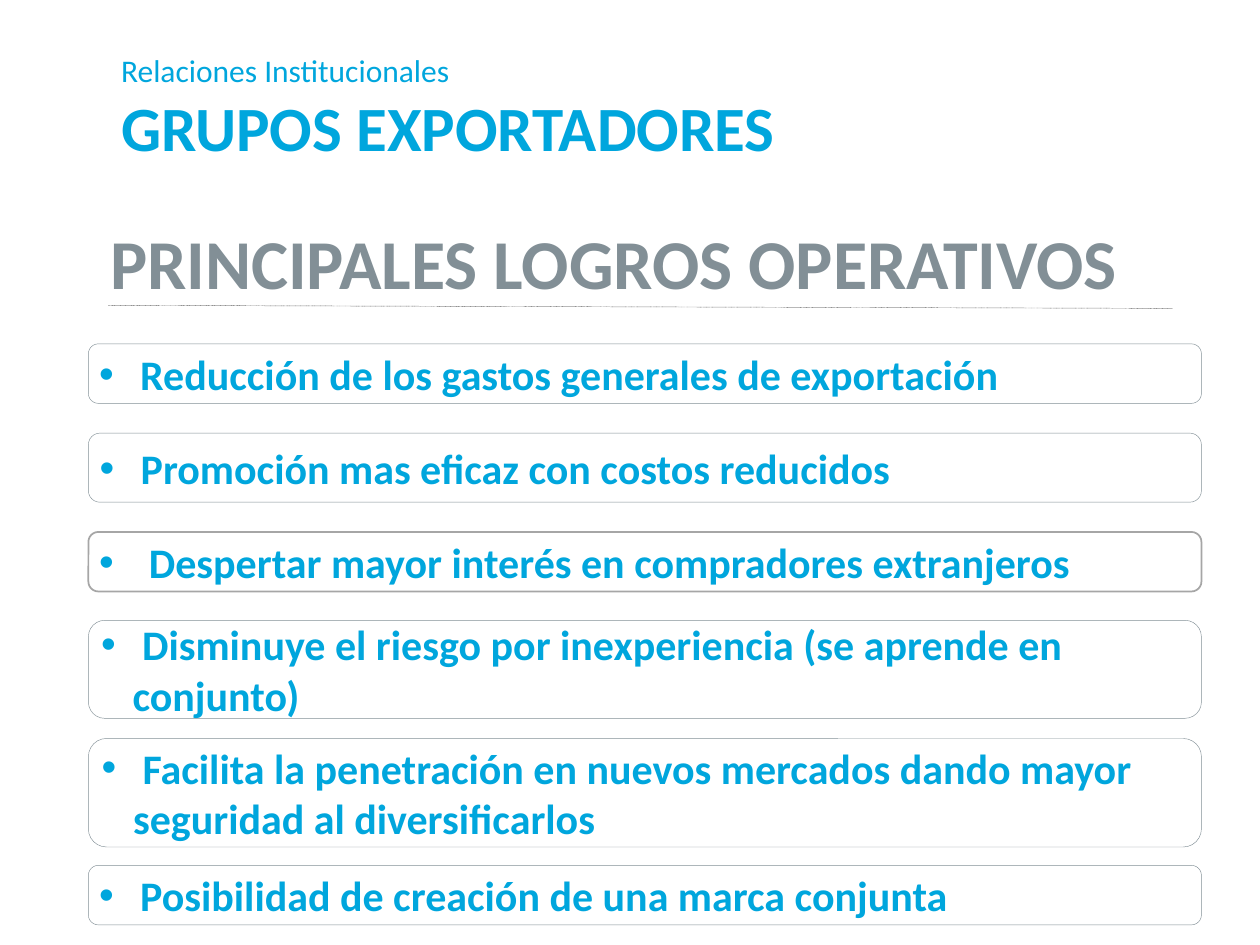
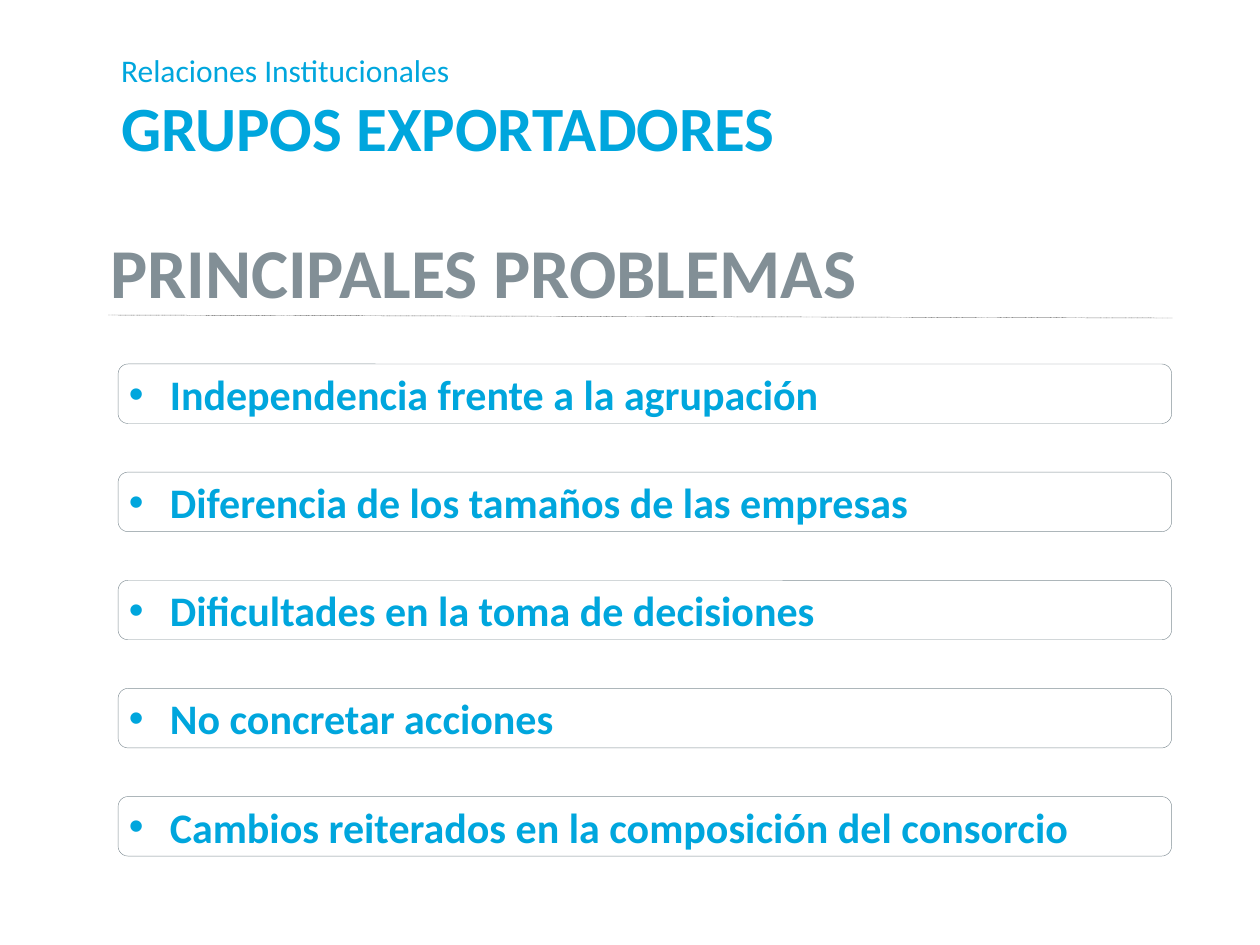
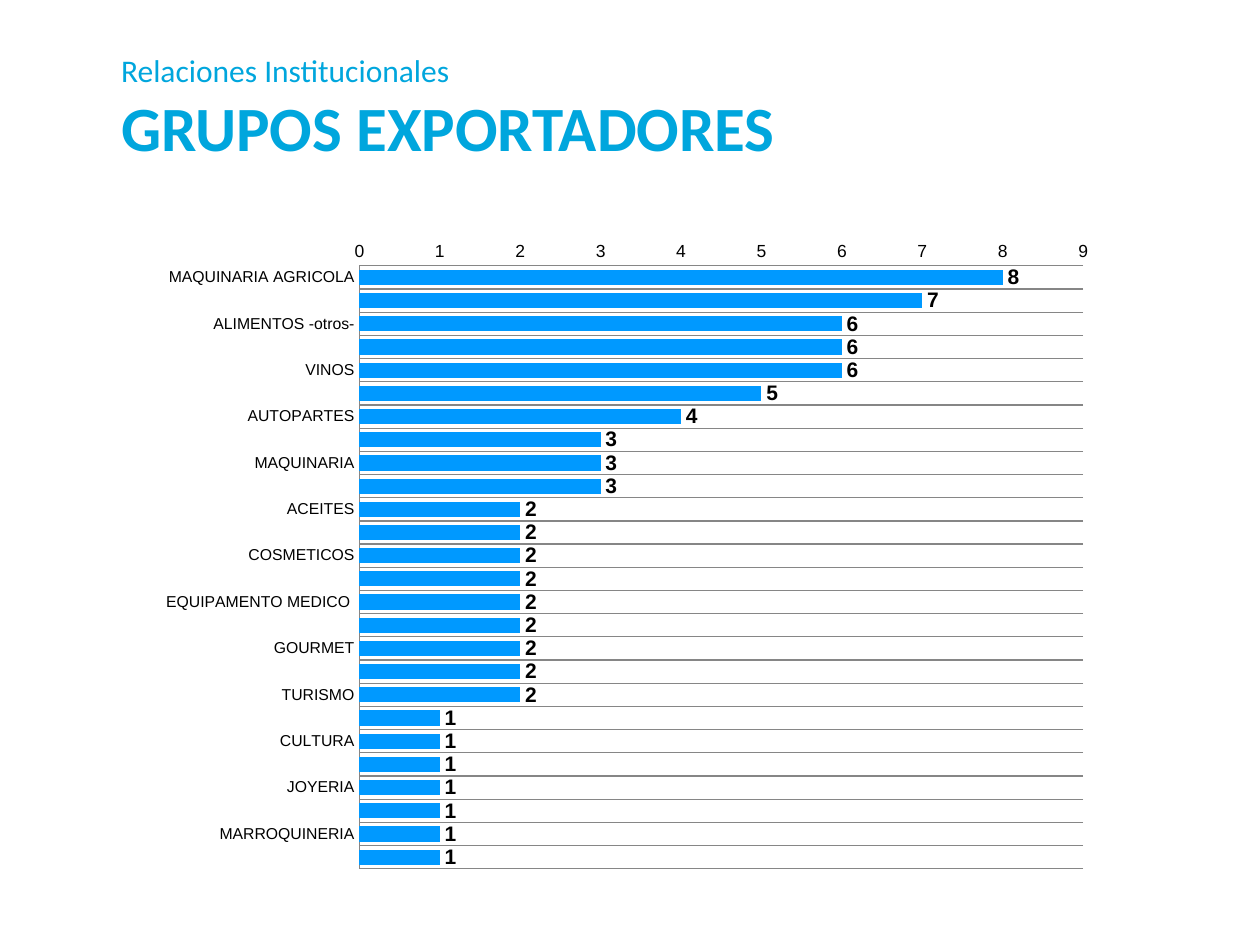
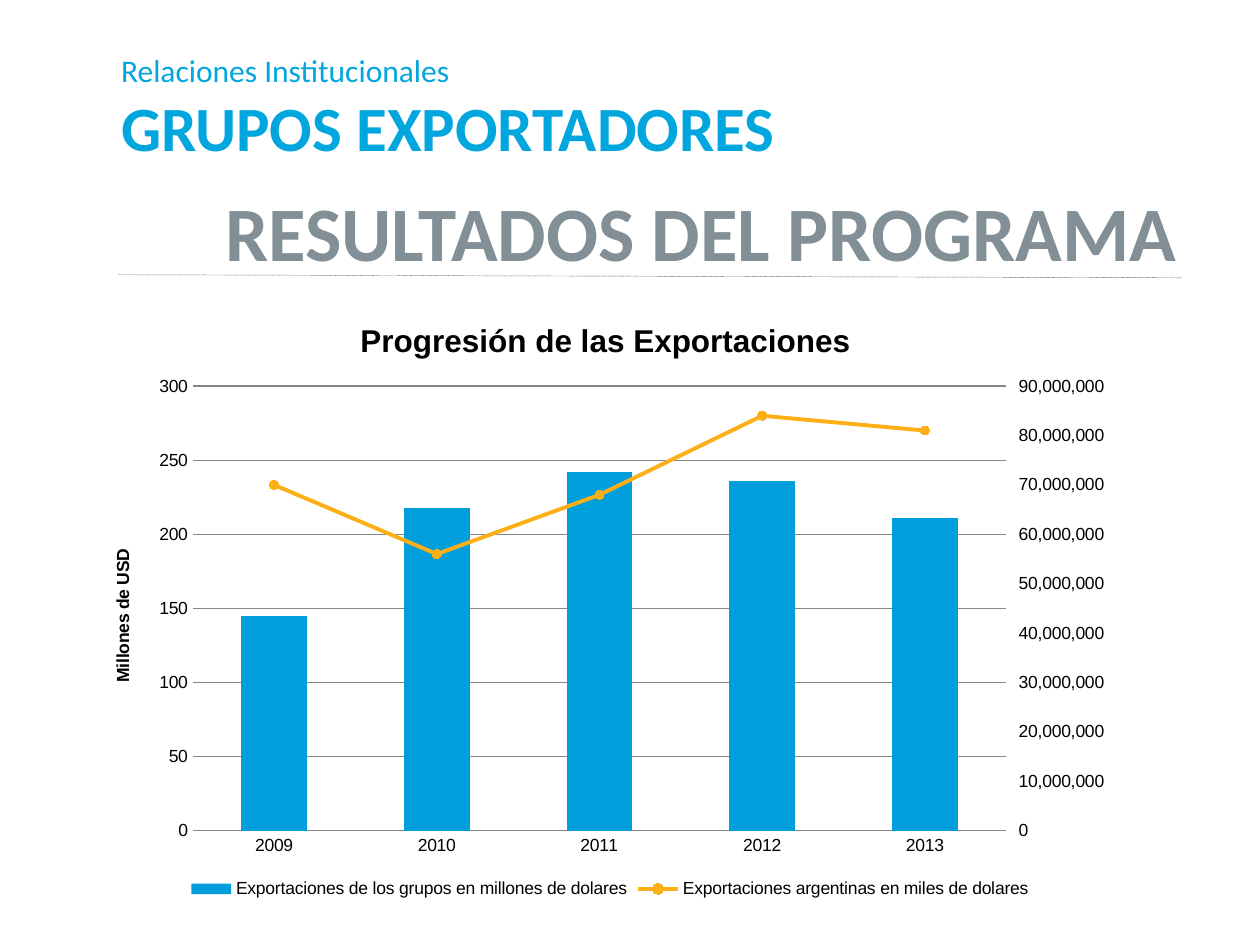
"""Build four slides on export groups: gains, problems, sectors and results."""
from dataclasses import dataclass

from pptx import Presentation
from pptx.chart.data import CategoryChartData as Data
from pptx.dml.color import RGBColor as RGB
from pptx.enum.chart import XL_CHART_TYPE as Kind, XL_LABEL_POSITION as Spot
from pptx.enum.chart import XL_LEGEND_POSITION as Side, XL_MARKER_STYLE as Mark
from pptx.enum.chart import XL_TICK_MARK as Tick
from pptx.enum.dml import MSO_LINE as Dash
from pptx.enum.shapes import MSO_CONNECTOR as Link, MSO_SHAPE as Form
from pptx.enum.text import MSO_ANCHOR as Anchor, MSO_AUTO_SIZE as Fit, PP_ALIGN as Align
from pptx.oxml import parse_xml
from pptx.oxml.ns import nsdecls, qn
from pptx.util import Pt


@dataclass(frozen=True)
class Theme:
    """Colours, fonts and type sizes."""
    blue: RGB = RGB.from_string("00A6DD")
    gray: RGB = RGB.from_string("828F96")
    pale: RGB = RGB.from_string("A6A6A6")
    dark: RGB = RGB.from_string("595959")
    grid: RGB = RGB.from_string("868686")
    black: RGB = RGB.from_string("000000")
    white: RGB = RGB.from_string("FFFFFF")
    bar: RGB = RGB.from_string("0099FF")
    column: RGB = RGB.from_string("009EDB")
    gold: RGB = RGB.from_string("FCAF17")
    font: str = "Calibri"
    plain: str = "Arial"
    small: int = 18
    title: int = 36
    head: int = 40
    large: int = 44
    item: int = 24
    label: int = 9
    axis: int = 10
    value: int = 12


look = Theme()


def box(slide, text, area, size, color, dent=0):
    """Add a rounded box with bold text, bulleted when dent is given."""
    shape = slide.shapes.add_shape(Form.ROUNDED_RECTANGLE, *map(Pt, area))
    shape.shadow.inherit = False
    shape.fill.background()
    shape.line.fill.background()
    frame = shape.text_frame
    frame.word_wrap = True
    frame.vertical_anchor = Anchor.MIDDLE
    frame.margin_left = frame.margin_right = Pt(4.5)
    frame.margin_top = frame.margin_bottom = Pt(3.6)
    frame.text = text
    par = frame.paragraphs[0]
    par.alignment = Align.LEFT
    if dent:
        shape.line.color.rgb = look.gray
        shape.line.width = Pt(0.25)
        props = par._p.get_or_add_pPr()
        props.set("marL", str(Pt(dent)))
        props.set("indent", str(-Pt(dent)))
        props.append(parse_xml(f'<a:buFont {nsdecls("a")} typeface="Arial"/>'))
        props.append(parse_xml(f'<a:buChar {nsdecls("a")} char="•"/>'))
    font = par.runs[0].font
    font.name, font.size, font.bold = look.font, Pt(size), True
    font.color.rgb = color
    return shape


def graph(slide, kind, data, area, plot):
    """Add a chart with the shared type and a fixed plot area."""
    chart = slide.shapes.add_chart(kind, *map(Pt, area), data).chart
    chart.font.name, chart.font.size = look.plain, Pt(look.axis)
    chart.font.color.rgb = look.black
    zone = chart._chartSpace.chart.plotArea
    for old in zone.findall(qn("c:layout")):
        zone.remove(old)
    parts = "".join(f'<c:{key} val="{val}"/>' for key, val in zip("xywh", plot))
    zone.insert(0, parse_xml(
        f'<c:layout {nsdecls("c")}><c:manualLayout><c:layoutTarget val="inner"/>'
        f'<c:xMode val="edge"/><c:yMode val="edge"/>{parts}'
        '</c:manualLayout></c:layout>'))
    for axis in (chart.category_axis, chart.value_axis):
        axis.major_tick_mark = axis.minor_tick_mark = Tick.NONE
        axis.has_major_gridlines = False
        axis.format.line.color.rgb = look.grid
        axis.format.line.width = Pt(0.75)
    return chart


deck = Presentation()
deck.slide_width, deck.slide_height = Pt(720), Pt(540)
for _ in range(4):
    slide = deck.slides.add_slide(deck.slide_layouts[5])
    title = slide.shapes.title
    title.left, title.top, title.width, title.height = map(Pt, (62, 16.5, 428, 90))
    frame = title.text_frame
    frame.text = "Relaciones Institucionales \vGRUPOS EXPORTADORES"
    frame.auto_size = Fit.NONE
    frame.word_wrap = True
    frame.vertical_anchor = Anchor.MIDDLE
    par = frame.paragraphs[0]
    par.alignment = Align.LEFT
    for run, size, bold in zip(par.runs, (look.small, look.title), (False, True)):
        run.font.name, run.font.size, run.font.bold = look.font, Pt(size), bold
        run.font.color.rgb = look.blue
gains, faults, sectors, results = deck.slides

heads = [
    (gains, "PRINCIPALES LOGROS OPERATIVOS", 124, 630, look.head, Align.LEFT, 62),
    (faults, "PRINCIPALES PROBLEMAS", 129.5, 624, look.head, Align.LEFT, 62),
    (results, "RESULTADOS DEL PROGRAMA", 106.5, 624, look.large, Align.RIGHT, 67.5),
]
for slide, text, top, width, size, align, left in heads:
    head = box(slide, text, (56, top, width, 50.5), size, look.gray)
    head.text_frame.paragraphs[0].alignment = align
    low = top + 50.5
    rule = slide.shapes.add_connector(
        Link.STRAIGHT, Pt(left), Pt(low), Pt(left + 608), Pt(low + 1.75))
    rule.line.color.rgb = look.dark
    rule.line.width = Pt(0.25)
    rule.line.dash_style = Dash.ROUND_DOT
    rule._element.spPr.append(parse_xml(f'<a:effectLst {nsdecls("a")}/>'))

rows = [
    (" Reducción de los gastos generales de exportación", 196.5, 34),
    (" Promoción mas eficaz con costos reducidos", 247.5, 39.5),
    (" Despertar mayor interés en compradores extranjeros", 304, 34),
    (" Disminuye el riesgo por inexperiencia (se aprende en conjunto)", 354.5, 56),
    (" Facilita la penetración en nuevos mercados dando mayor seguridad al"
     " diversificarlos", 422, 62),
    (" Posibilidad de creación de una marca conjunta", 494.5, 34),
]
for text, top, high in rows:
    key = text.startswith(" Despertar")
    item = box(gains, text, (50.5, top, 636, high), look.item, look.blue, 23 if key else 18)
    if key:
        item.fill.solid()
        item.fill.fore_color.rgb = look.white
        item.line.color.rgb = look.pale
        item.line.width = Pt(1)

faces = [
    " Independencia frente a la agrupación",
    " Diferencia de los tamaños de las empresas",
    " Dificultades en la toma de decisiones",
    " No concretar acciones",
    " Cambios reiterados en la composición del consorcio",
]
for num, text in enumerate(faces):
    box(faults, text, (67.5, 208 + 61.8 * num, 602, 34), look.item, look.blue, 18)

groups = {
    8: ["MAQUINARIA AGRICOLA"],
    7: ["APICULTURA"],
    6: ["ALIMENTOS -otros-", "FRUTAS Y VERDURAS", "VINOS"],
    5: ["AUDIOVISUALES"],
    4: ["AUTOPARTES"],
    3: ["EDUCACION", "MAQUINARIA", "MODA"],
    2: ["ACEITES", "CONSTRUCCION", "COSMETICOS", "ELECTRO ELECTRONICA",
        "EQUIPAMENTO MEDICO ", "FERRETERIA", "GOURMET", "MUEBLES", "TURISMO"],
    1: ["BIOTECNOLOGIA", "CULTURA", "DEPORTES", "JOYERIA", "JUEGOS",
        "MARROQUINERIA", "TECNOLOGIA INFORMATICA"],
}
data = Data()
data.categories = [name for names in groups.values() for name in names]
data.add_series("Series 1", [num for num, names in groups.items() for _ in names])
chart = graph(sectors, Kind.BAR_CLUSTERED, data, (84, 129.5, 551.5, 374.5),
              (0.22, 0.06, 0.75, 0.92))
chart.has_legend = chart.has_title = False
names, scale = chart.category_axis, chart.value_axis
names.reverse_order = True
names.tick_labels.font.size = Pt(look.label)
names.has_major_gridlines = True
names.major_gridlines.format.line.color.rgb = look.grid
names.major_gridlines.format.line.width = Pt(0.75)
scale.minimum_scale, scale.maximum_scale, scale.major_unit = 0, 9, 1
plot = chart.plots[0]
plot.gap_width, plot.vary_by_categories = 52, False
plot.series[0].format.fill.solid()
plot.series[0].format.fill.fore_color.rgb = look.bar
plot.has_data_labels = True
tags = plot.data_labels
tags.show_value, tags.position = True, Spot.OUTSIDE_END
tags.font.size, tags.font.bold = Pt(look.value), True

data = Data()
data.categories = ["2009", "2010", "2011", "2012", "2013"]
data.add_series("Exportaciones de los grupos en millones de dolares",
                [145, 218, 242, 236, 211])
data.add_series("Exportaciones argentinas en miles de dolares",
                [num * 1000000 for num in (70, 56, 68, 84, 81)])
chart = graph(results, Kind.COLUMN_CLUSTERED, data, (50.5, 168.5, 596, 348),
              (0.1, 0.15, 0.78, 0.73))
chart.has_title = True
chart.chart_title.text_frame.text = "Progresión de las Exportaciones "
scale = chart.value_axis
scale.has_title = True
scale.axis_title.text_frame.text = "Millones de USD"
for part, size in ((chart.chart_title, look.small), (scale.axis_title, look.axis)):
    font = part.text_frame.paragraphs[0].runs[0].font
    font.name, font.size, font.bold = look.plain, Pt(size), True
    font.color.rgb = look.black
scale.minimum_scale, scale.maximum_scale, scale.major_unit = 0, 300, 50
scale.format.line.fill.background()
scale.has_major_gridlines = True
scale.major_gridlines.format.line.color.rgb = look.grid
scale.major_gridlines.format.line.width = Pt(0.75)
chart.has_legend = True
chart.legend.position = Side.BOTTOM
chart.legend.include_in_layout = False
plot = chart.plots[0]
plot.gap_width, plot.overlap, plot.vary_by_categories = 148, -25, False
plot.series[0].format.fill.solid()
plot.series[0].format.fill.fore_color.rgb = look.column

zone = chart._chartSpace.chart.plotArea
bars = zone.find(qn("c:barChart"))
trend = bars.findall(qn("c:ser"))[1]
for flag in trend.findall(qn("c:invertIfNegative")):
    trend.remove(flag)
lines = parse_xml(
    f'<c:lineChart {nsdecls("c")}><c:grouping val="standard"/><c:varyColors val="0"/>'
    '<c:marker val="1"/><c:axId val="501"/><c:axId val="502"/></c:lineChart>')
lines.insert(2, trend)
bars.addnext(lines)
last = zone.find(qn("c:valAx"))
for kind, own, other, hide, side, rest in (
        ("valAx", 502, 501, 0, "r",
         '<c:numFmt formatCode="#,##0" sourceLinked="0"/><c:majorTickMark val="cross"/>'
         '<c:minorTickMark val="none"/><c:tickLblPos val="nextTo"/>'
         '<c:spPr><a:ln><a:noFill/></a:ln></c:spPr>'),
        ("catAx", 501, 502, 1, "b", "")):
    cross = "max" if kind == "valAx" else "autoZero"
    last.addnext(parse_xml(
        f'<c:{kind} {nsdecls("c", "a")}><c:axId val="{own}"/>'
        '<c:scaling><c:orientation val="minMax"/></c:scaling>'
        f'<c:delete val="{hide}"/><c:axPos val="{side}"/>{rest}'
        f'<c:crossAx val="{other}"/><c:crosses val="{cross}"/></c:{kind}>'))
line = chart.plots[1].series[0]
line.smooth = False
line.format.line.color.rgb = look.gold
line.format.line.width = Pt(2.25)
line.marker.style, line.marker.size = Mark.CIRCLE, 5
line.marker.format.fill.solid()
line.marker.format.fill.fore_color.rgb = look.gold
line.marker.format.line.color.rgb = look.gold

deck.save("out.pptx")
